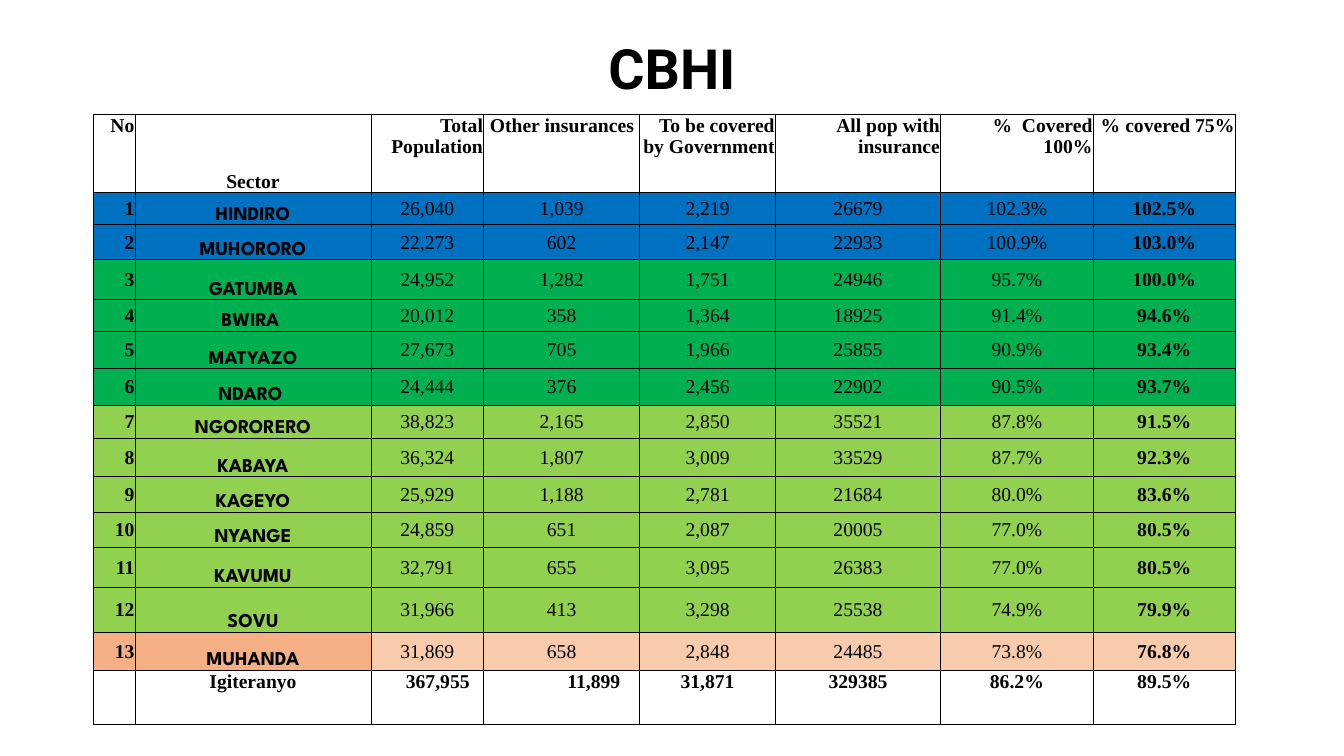
from lxml.etree import SubElement
from pptx import Presentation
from pptx.dml.color import RGBColor
from pptx.enum.text import MSO_ANCHOR, PP_ALIGN
from pptx.oxml.ns import qn
from pptx.util import Pt

BLACK, WHITE = "000000", "FFFFFF"
BLUE, GREEN, LIME = "0070C0", "00B050", "92D050"
ORANGE, PEACH = "F4B084", "F8CBAD"
ALIGN = {"left": PP_ALIGN.LEFT, "center": PP_ALIGN.CENTER, "right": PP_ALIGN.RIGHT}
ANCHOR = {"top": MSO_ANCHOR.TOP, "middle": MSO_ANCHOR.MIDDLE, "bottom": MSO_ANCHOR.BOTTOM}

HEADINGS = ["No", "Sector", "Total Population", "Other insurances ",
            "To be covered by Government", "All pop with insurance",
            "%  Covered 100%", "% covered 75%"]
SECTORS = [
    ("HINDIRO", "26,040", "1,039", "2,219", "26679", "102.3%", "102.5%"),
    ("MUHORORO", "22,273", "602", "2,147", "22933", "100.9%", "103.0%"),
    ("GATUMBA", "24,952", "1,282", "1,751", "24946", "95.7%", "100.0%"),
    ("BWIRA ", "20,012", "358", "1,364", "18925", "91.4%", "94.6%"),
    ("MATYAZO", "27,673", "705", "1,966", "25855", "90.9%", "93.4%"),
    ("NDARO ", "24,444", "376", "2,456", "22902", "90.5%", "93.7%"),
    ("NGORORERO", "38,823", "2,165", "2,850", "35521", "87.8%", "91.5%"),
    ("KABAYA", "36,324", "1,807", "3,009", "33529", "87.7%", "92.3%"),
    ("KAGEYO", "25,929", "1,188", "2,781", "21684", "80.0%", "83.6%"),
    ("NYANGE", "24,859", "651", "2,087", "20005", "77.0%", "80.5%"),
    ("KAVUMU", "32,791", "655", "3,095", "26383", "77.0%", "80.5%"),
    ("SOVU", "31,966", "413", "3,298", "25538", "74.9%", "79.9%"),
    ("MUHANDA", "31,869", "658", "2,848", "24485", "73.8%", "76.8%"),
]
TOTALS = ["", "Igiteranyo", "367,955", "11,899", "31,871", "329385", "86.2%", "89.5%"]
TOTAL_INDENTS = {2: 15, 3: 46}
# One colour per coverage band, in sector order
BANDS = [BLUE] * 2 + [GREEN] * 4 + [LIME] * 6 + [ORANGE]
COLUMN_WIDTHS = [29.5, 168.5, 80.5, 111.5, 97, 118, 109, 101.5]
ROW_HEIGHTS = [56, 23, 25, 28.5, 22.5, 27, 26, 23.5, 27.5, 25.5, 25, 28.5, 32, 27.5, 38.5]


def rgb(value):
    return RGBColor.from_string(value)


def write(frame, text, font="Times New Roman", size=14, bold=True, color=BLACK,
          align="center", spacing=1.0):
    paragraph = frame.paragraphs[0]
    paragraph.alignment = ALIGN[align]
    paragraph.line_spacing = spacing
    run = paragraph.add_run()
    run.text = text
    run.font.name, run.font.size, run.font.bold = font, Pt(size), bold
    run.font.color.rgb = rgb(color)


class CoverageSlide:
    """Holds the current slide and the shared table style."""
    border_color, border_width = BLACK, 0.5

    def __init__(self, deck):
        self.slide = deck.slides.add_slide(deck.slide_layouts[6])

    def title(self, text, left, top, width, height, **style):
        frame = self.slide.shapes.add_textbox(
            Pt(left), Pt(top), Pt(width), Pt(height)).text_frame
        frame.word_wrap = True
        frame.vertical_anchor = MSO_ANCHOR.MIDDLE
        write(frame, text, **style)

    def table(self, left, top, widths, heights):
        table = self.slide.shapes.add_table(
            len(heights), len(widths), Pt(left), Pt(top),
            Pt(sum(widths)), Pt(sum(heights))).table
        table.first_row = table.horz_banding = False
        for column, width in zip(table.columns, widths):
            column.width = Pt(width)
        for row, height in zip(table.rows, heights):
            row.height = Pt(height)
        return table

    def cell(self, cell, text, fill, anchor="middle", indent=0, **style):
        cell.margin_left = Pt(0.5 + indent)
        cell.margin_right = cell.margin_top = Pt(0.5)
        cell.margin_bottom = 0
        cell.vertical_anchor = ANCHOR[anchor]
        properties = cell._tc.get_or_add_tcPr()
        for side in ("a:lnL", "a:lnR", "a:lnT", "a:lnB"):
            line = SubElement(properties, qn(side), w=str(Pt(self.border_width)))
            solid = SubElement(line, qn("a:solidFill"))
            SubElement(solid, qn("a:srgbClr"), val=self.border_color)
        cell.fill.solid()
        cell.fill.fore_color.rgb = rgb(fill)
        if text:
            write(cell.text_frame, text, **style)


def main():
    deck = Presentation()
    deck.slide_width, deck.slide_height = Pt(960), Pt(540)
    page = CoverageSlide(deck)
    page.title("CBHI", 66, 29, 828, 44, font="Roboto", size=39.6, spacing=0.9)
    coverage = page.table(67, 81.5, COLUMN_WIDTHS, ROW_HEIGHTS)

    # Headings
    for column, heading in enumerate(HEADINGS):
        is_sector = column == 1
        page.cell(coverage.cell(0, column), heading, WHITE,
                  anchor="bottom" if is_sector else "top",
                  align="center" if is_sector else "right")

    # Sectors: number, name, figures, with the last figure bold
    for number, (sector, band) in enumerate(zip(SECTORS, BANDS), start=1):
        name, *figures = sector
        page.cell(coverage.cell(number, 0), str(number), band, align="right")
        page.cell(coverage.cell(number, 1), name, band, anchor="bottom",
                  font="League Spartan")
        figure_fill = PEACH if band == ORANGE else band
        for column, figure in enumerate(figures, start=2):
            page.cell(coverage.cell(number, column), figure, figure_fill,
                      bold=column == len(HEADINGS) - 1)

    # Totals
    for column, total in enumerate(TOTALS):
        page.cell(coverage.cell(len(SECTORS) + 1, column), total, WHITE,
                  anchor="top", indent=TOTAL_INDENTS.get(column, 0))

    deck.save("out.pptx")


if __name__ == "__main__":
    main()
